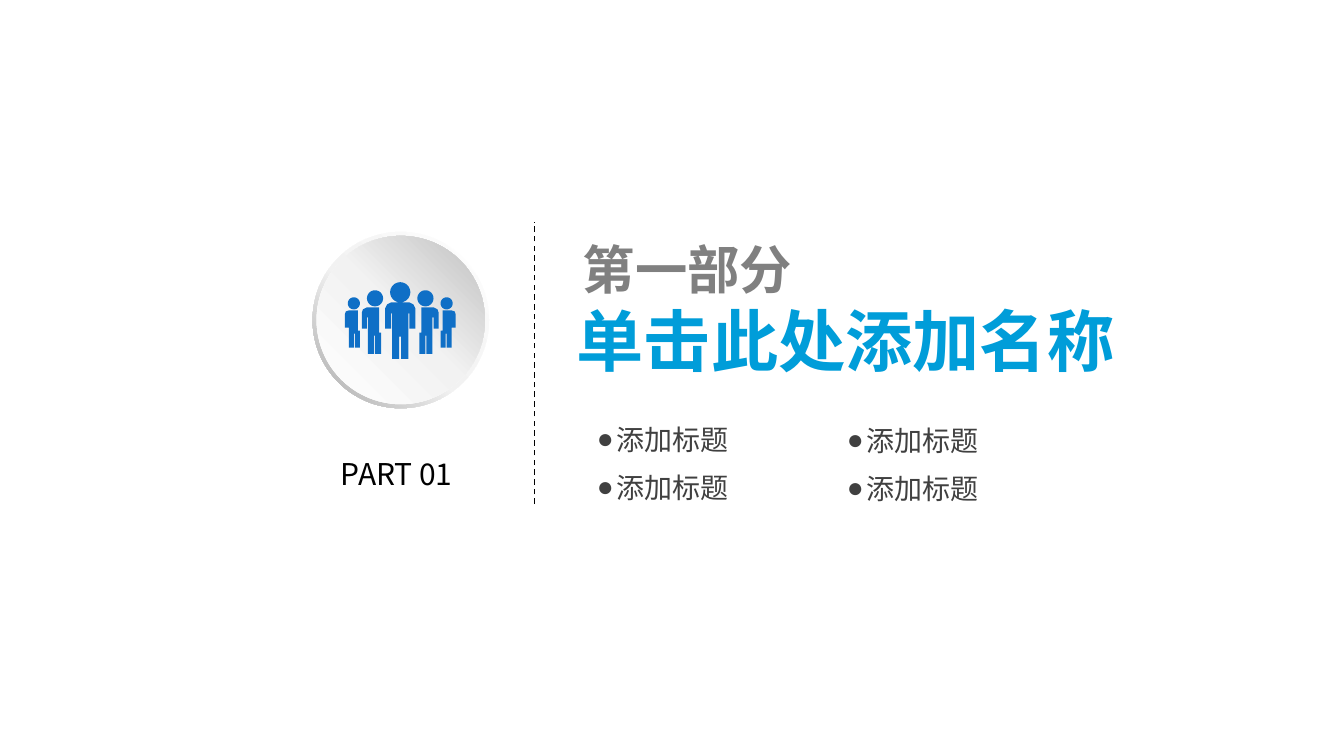
import math

import pptx
import pptx.dml.color
import pptx.enum.dml
import pptx.enum.shapes
import pptx.enum.text
import pptx.oxml
import pptx.oxml.ns
import pptx.util

Inches = pptx.util.Inches
Pt = pptx.util.Pt
SHAPES = pptx.enum.shapes.MSO_SHAPE

COLORS = {
    "title": "009DD9", "part": "808080", "list": "404040", "black": "000000",
    "icon": "0F6FC6", "white": "FFFFFF", "light": "F2F2F2",
    "shade": "BFBFBF", "rim": "A6A6A6",
}


class SectionSlide:
    """Holds the style and the current slide."""

    font = "Noto Sans CJK SC"
    bullet_font = "Arial"

    def __init__(self, deck):
        self.page = deck.slides.add_slide(deck.slide_layouts[3])
        self.badge = self.page.shapes.add_group_shape()

    def color(self, name):
        return pptx.dml.color.RGBColor.from_string(COLORS[name])

    def place(self, box, left, top, width, height, margins=(0, 0)):
        box.left, box.top = Inches(left), Inches(top)
        box.width, box.height = Inches(width), Inches(height)
        frame = box.text_frame
        frame.word_wrap = True
        frame.auto_size = pptx.enum.text.MSO_AUTO_SIZE.NONE
        frame.vertical_anchor = pptx.enum.text.MSO_ANCHOR.TOP
        frame.margin_left = frame.margin_right = Inches(margins[0])
        frame.margin_top = frame.margin_bottom = Inches(margins[1])
        return frame

    def paragraph(self, frame, index, text, size, color, bold=False, before=0):
        para = frame.paragraphs[0] if index == 0 else frame.add_paragraph()
        para.alignment = pptx.enum.text.PP_ALIGN.LEFT
        para.line_spacing = 1.0
        para.space_before = Pt(before if index else 0)
        para.space_after = Pt(0)
        span = para.add_run()
        span.text = text
        span.font.name = self.font
        span.font.size = Pt(size)
        span.font.bold = bold
        span.font.color.rgb = self.color(color)
        east_asian = span.font._element.makeelement(pptx.oxml.ns.qn("a:ea"), {"typeface": self.font})
        span.font._element.append(east_asian)
        return para

    def indent(self, para, margin, first=0):
        properties = para._p.get_or_add_pPr()
        properties.set("marL", str(Inches(margin)))
        properties.set("indent", str(Inches(first)))
        return properties

    def title(self, part, name):
        frame = self.place(self.page.shapes.title, 5.62, 2.3, 5.7, 1.54, (0.1, 0.05))
        part_line = self.paragraph(frame, 0, part, 37.4, "part", True)
        self.indent(part_line, 0.06)
        name_line = self.paragraph(frame, 1, name, 48, "title", True)
        self.indent(name_line, 0)

    def bullets(self, index, left, top, items):
        frame = self.place(self.page.placeholders[index], left, top, 2.93, 0.82)
        for row, item in enumerate(items):
            para = self.paragraph(frame, row, item, 20, "list", before=10.2)
            properties = self.indent(para, 0.19, -0.19)
            for tag, key, value in (("a:buFont", "typeface", self.bullet_font),
                                    ("a:buChar", "char", "●")):
                properties.append(properties.makeelement(pptx.oxml.ns.qn(tag), {key: value}))

    def label(self, text, left, top, width, height):
        box = self.page.shapes.add_textbox(0, 0, 0, 0)
        frame = self.place(box, left, top, width, height)
        self.paragraph(frame, 0, text, 21.4, "black")

    def dashed_line(self, x, top, bottom):
        line = self.page.shapes.add_connector(
            pptx.enum.shapes.MSO_CONNECTOR.STRAIGHT,
            Inches(x), Inches(bottom), Inches(x), Inches(top))
        line.line.color.rgb = self.color("black")
        line.line.width = Pt(1)
        line.line.dash_style = pptx.enum.dml.MSO_LINE.DASH
        properties = line._element.spPr
        properties.append(properties.makeelement(pptx.oxml.ns.qn("a:effectLst"), {}))

    def gradient_disc(self, kind, left, top, size, stops, angle):
        disc = self.badge.shapes.add_shape(
            kind, Inches(left), Inches(top), Inches(size), Inches(size))
        disc.shadow.inherit = False
        disc.line.fill.background()
        disc.fill.gradient()
        disc.fill.gradient_angle = 360 - angle
        stop_list = disc._element.spPr.find(".//" + pptx.oxml.ns.qn("a:gsLst"))
        for old_stop in list(stop_list):
            stop_list.remove(old_stop)
        for position, name in stops:
            stop = stop_list.makeelement(pptx.oxml.ns.qn("a:gs"), {"pos": str(position * 1000)})
            stop.append(stop.makeelement(pptx.oxml.ns.qn("a:srgbClr"), {"val": COLORS[name]}))
            stop_list.append(stop)
        return disc

    def outline(self, contours, color):
        contours = [[(Inches(x), Inches(y)) for x, y in points] for points in contours]
        builder = self.badge.shapes.build_freeform(*contours[0][0], scale=1.0)
        builder.add_line_segments(contours[0][1:], close=True)
        for points in contours[1:]:
            builder.move_to(*points[0])
            builder.add_line_segments(points[1:], close=True)
        shape = builder.convert_to_shape()
        shape.shadow.inherit = False
        shape.fill.solid()
        shape.fill.fore_color.rgb = self.color(color)
        shape.line.fill.background()


def head(x, y, radius_x, radius_y, steps=32):
    turns = [2 * math.pi * step / steps for step in range(steps)]
    return [(x + radius_x * math.cos(turn), y + radius_y * math.sin(turn)) for turn in turns]


def mirror(points, axis=3.97):
    return [(2 * axis - x, y) for x, y in points]


def people():
    outer_body = [
        (3.57, 3.28), (3.57, 3.45), (3.52, 3.45), (3.52, 3.31), (3.51, 3.31),
        (3.51, 3.45), (3.46, 3.45), (3.46, 3.25), (3.42, 3.25), (3.42, 3.12),
        (3.43, 3.09), (3.46, 3.08), (3.55, 3.08), (3.55, 3.28)]
    inner_body = [
        (3.78, 3.3), (3.78, 3.51), (3.72, 3.51), (3.72, 3.33), (3.71, 3.33),
        (3.71, 3.51), (3.65, 3.51), (3.65, 3.15), (3.64, 3.15), (3.64, 3.26),
        (3.59, 3.26), (3.59, 3.1), (3.6, 3.07), (3.64, 3.05), (3.76, 3.05),
        (3.76, 3.3)]
    leader_half = [
        (3.96, 3.34), (3.96, 3.56), (3.89, 3.56), (3.89, 3.11), (3.88, 3.11),
        (3.88, 3.26), (3.82, 3.26), (3.82, 3.06), (3.84, 3.02), (3.88, 3)]
    left_side = [outer_body, head(3.51, 3.01, 0.06, 0.06),
                 inner_body, head(3.72, 2.96, 0.08, 0.08)]
    leader = [leader_half + mirror(leader_half)[::-1], head(3.97, 2.9, 0.1, 0.1)]
    return leader + left_side + [mirror(points) for points in left_side]


def main():
    deck = pptx.Presentation()
    deck.slide_width, deck.slide_height = Inches(13.33), Inches(7.5)
    section = SectionSlide(deck)

    # Heading and divider
    section.title("第一部分", "单击此处添加名称")
    section.dashed_line(5.3, 2.2, 5)

    # Badge with the group of people
    rim = section.gradient_disc(SHAPES.DONUT, 3.1, 2.3, 1.75,
                                [(0, "white"), (55, "light"), (100, "rim")], 135)
    rim.adjustments[0] = 0.05
    section.gradient_disc(SHAPES.OVAL, 3.14, 2.34, 1.67,
                          [(0, "white"), (51, "light"), (100, "shade")], 315)
    section.outline(people(), "icon")
    section.label("PART 01", 3.38, 4.52, 1.32, 0.36)

    # Two columns of topics
    for index, left, top in ((1, 5.92, 4.19), (2, 8.4, 4.2)):
        section.bullets(index, left, top, ["添加标题"] * 2)

    # Unused placeholders
    for box in list(section.page.placeholders):
        if not box.text_frame.text:
            box._element.getparent().remove(box._element)

    deck.save("out.pptx")


if __name__ == "__main__":
    main()
